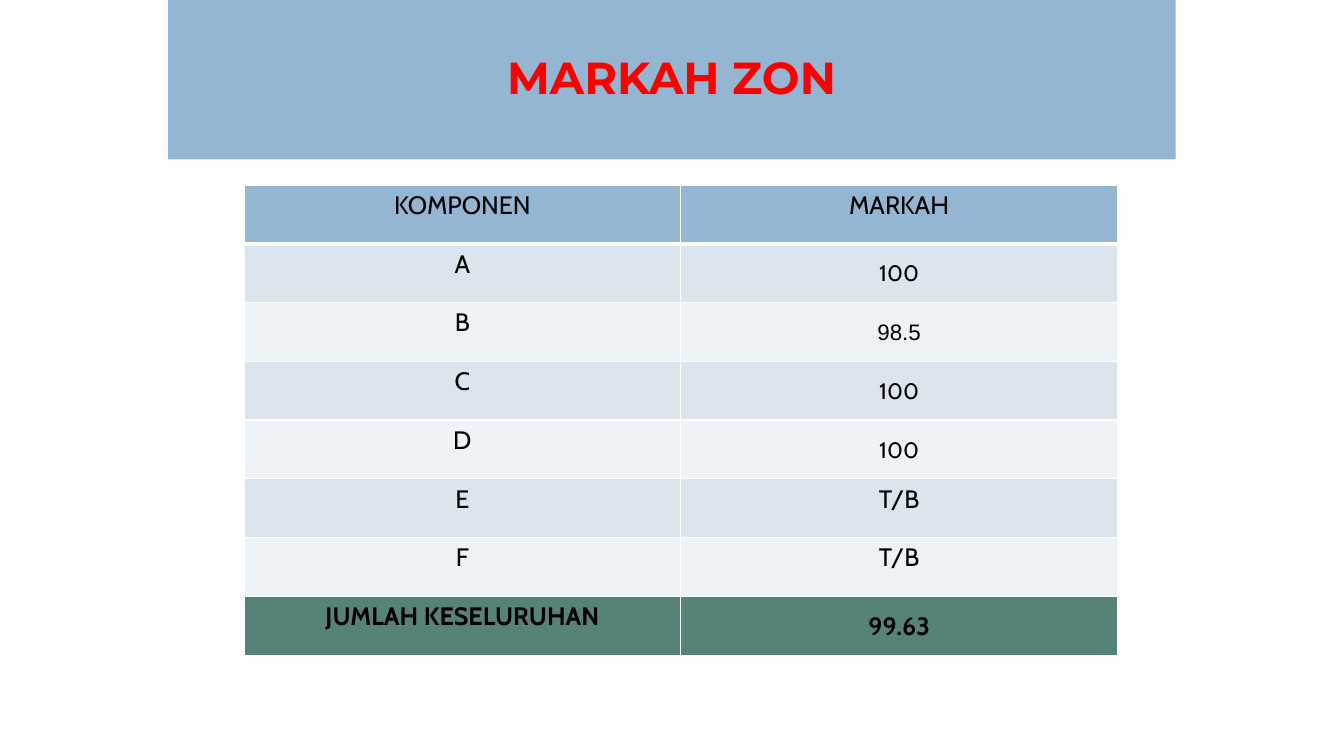
from lxml import etree
from pptx import Presentation
from pptx.dml.color import RGBColor
from pptx.enum.shapes import MSO_SHAPE
from pptx.enum.text import MSO_ANCHOR, PP_ALIGN
from pptx.oxml.ns import qn
from pptx.util import Cm, Pt

RECTANGLE = MSO_SHAPE.RECTANGLE
TOP, MIDDLE = MSO_ANCHOR.TOP, MSO_ANCHOR.MIDDLE
CENTER = PP_ALIGN.CENTER

BLUE, GREEN = "94B6D2", "578279"
BANDS = ("DCE5EE", "EEF3F7")
WHITE, BLACK, RED = "FFFFFF", "000000", "FF0000"

HEADINGS = ("KOMPONEN", "MARKAH")
MARKS = (("A", "100"), ("B", "98.5"), ("C", "100"), ("D", "100"),
         ("E", "T/B"), ("F", "T/B"))
TOTAL = ("JUMLAH KESELURUHAN", "99.63")


def color(hex_value):
    return RGBColor.from_string(hex_value)


def write(frame, text, size, font, hex_value, bold=False):
    paragraph = frame.paragraphs[0]
    paragraph.alignment = CENTER
    run = paragraph.add_run()
    run.text = text
    run.font.size = Pt(size)
    run.font.name = font
    run.font.bold = bold
    run.font.color.rgb = color(hex_value)
    return paragraph


def border_cell(cell, bottom_width):
    """Draw white lines on all four sides of a cell."""
    properties = cell._tc.get_or_add_tcPr()
    widths = (("a:lnL", 1), ("a:lnR", 1), ("a:lnT", 1), ("a:lnB", bottom_width))
    for position, (tag, width) in enumerate(widths):
        line = etree.Element(qn(tag), w=str(Pt(width)))
        fill = etree.SubElement(line, qn("a:solidFill"))
        etree.SubElement(fill, qn("a:srgbClr"), val=WHITE)
        properties.insert(position, line)


def add_title_band(slide, left, top, width, height):
    band = slide.shapes.add_shape(RECTANGLE, left, top, width, height)
    band.shadow.inherit = False
    band.fill.solid()
    band.fill.fore_color.rgb = color(BLUE)
    band.line.fill.background()
    band.text_frame.word_wrap = True
    band.text_frame.vertical_anchor = MIDDLE
    title = write(band.text_frame, "MARKAH ZON", 32, "Montserrat", RED, bold=True)
    title.line_spacing = 0.9


def fill_cell(cell, text, background, bold=False, bottom_width=1):
    cell.fill.solid()
    cell.fill.fore_color.rgb = color(background)
    border_cell(cell, bottom_width)
    is_number = text[0].isdigit()
    cell.vertical_anchor = MIDDLE if is_number else TOP
    if is_number:
        cell.margin_left = cell.margin_right = cell.margin_top = Cm(0.03)
        cell.margin_bottom = Cm(0)
    size = 16 if is_number and not bold else 18
    font = "Arial" if text == "98.5" else "Cabin"
    write(cell.text_frame, text, size, font, BLACK, bold)


def add_marks_table(slide, left, top, width, height):
    rows = (HEADINGS, *MARKS, TOTAL)
    frame = slide.shapes.add_table(len(rows), len(HEADINGS), left, top, width, height)
    table = frame.table
    for row_index, row in enumerate(rows):
        for column, text in enumerate(row):
            cell = table.cell(row_index, column)
            if row is HEADINGS:
                fill_cell(cell, text, BLUE, bottom_width=3)
            elif row is TOTAL:
                fill_cell(cell, text, GREEN, bold=True)
            else:
                fill_cell(cell, text, BANDS[(row_index - 1) % 2])


def main():
    presentation = Presentation()
    presentation.slide_width = Cm(33.87)
    presentation.slide_height = Cm(19.05)
    slide = presentation.slides.add_slide(presentation.slide_layouts[6])

    # Title across the top
    add_title_band(slide, Cm(4.23), Cm(0), Cm(25.4), Cm(4.02))
    # Marks for each component, with the total
    add_marks_table(slide, Cm(6.15), Cm(4.66), Cm(22.01), Cm(11.85))

    presentation.save("out.pptx")


if __name__ == "__main__":
    main()
